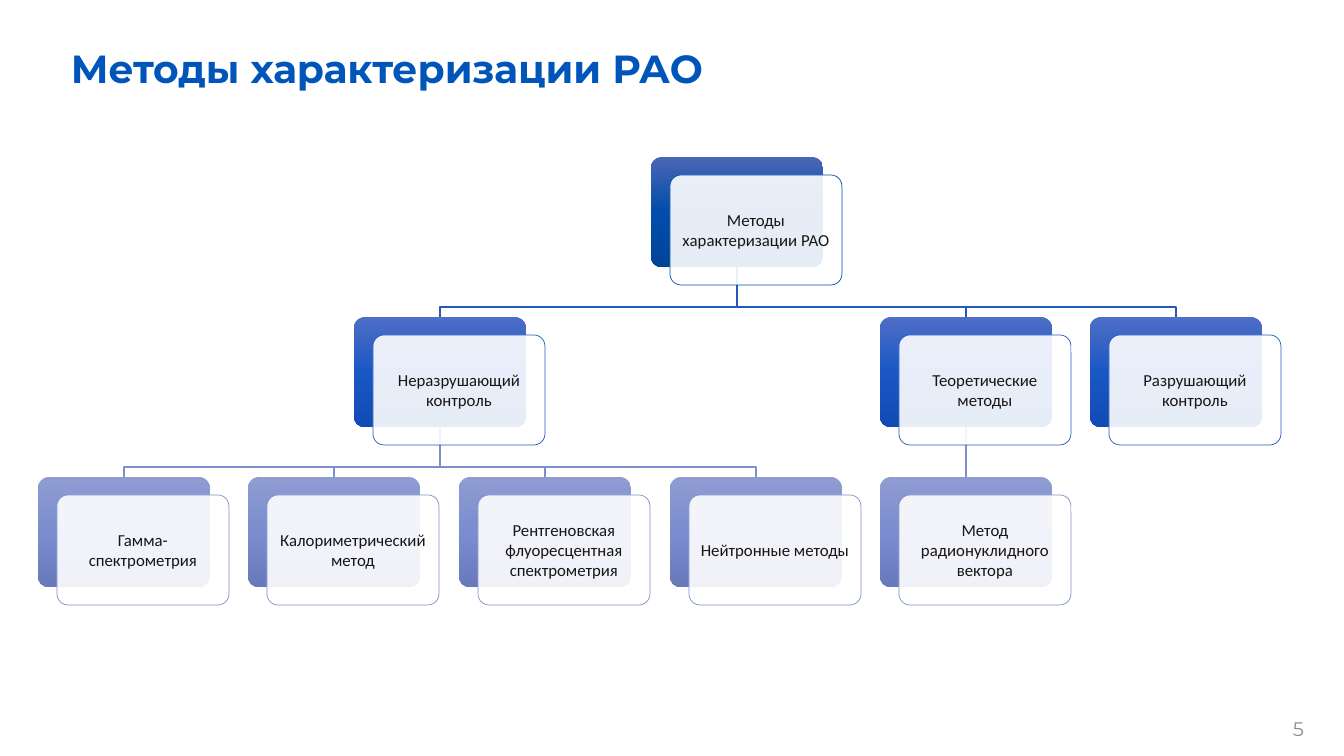
from copy import deepcopy
from dataclasses import dataclass

from lxml.etree import SubElement
from pptx import Presentation
from pptx.dml.color import RGBColor
from pptx.enum.shapes import MSO_CONNECTOR, MSO_SHAPE
from pptx.enum.text import MSO_ANCHOR, PP_ALIGN
from pptx.oxml.ns import qn
from pptx.util import Emu, Pt

SLIDE_SIZE = (1344, 756)
EMU_PER_PX = 12192000 / SLIDE_SIZE[0]


def px(length):
    return Emu(round(length * EMU_PER_PX))


@dataclass(frozen=True)
class Tier:
    gradient: tuple
    line: str


@dataclass(frozen=True)
class Theme:
    heading_font: str = "Montserrat"
    card_font: str = "Calibri"
    title_size: int = 28
    number_size: int = 14
    card_size: int = 12
    title: str = "0055BB"
    number: str = "8F9092"
    card_text: str = "171616"
    card_fill: str = "FFFFFF"
    tiers: tuple = (
        Tier(("4B66B4", "004DAA", "004497"), "004DAA"),
        Tier(("4F6EC6", "1A57C4", "114BB5"), "2259BC"),
        Tier(("8E9CD1", "7B8DCF", "697ABC"), "7F8FCB"),
    )


@dataclass(frozen=True)
class Method:
    label: str
    column: float
    children: tuple = ()


class HierarchySlide:
    LEFT, TOP = 38, 157
    COLUMN_STEP, TIER_STEP = 210.5, 160
    CARD_WIDTH, CARD_HEIGHT = 172, 110
    FRONT_DX, FRONT_DY = 19, 18
    BEND_RISE = 10  # height of the horizontal branch above the child card

    def __init__(self, slide, theme):
        self.shapes = slide.shapes
        self.theme = theme

    def corner(self, method, level):
        """Top left corner of a method's back card."""
        left = round(self.LEFT + method.column * self.COLUMN_STEP)
        return left, self.TOP + level * self.TIER_STEP

    def style_text(self, frame, text, font, size, color, bold=False):
        frame.text = text
        for run in frame.paragraphs[0].runs:
            run.font.name = font
            run.font.size = Pt(size)
            run.font.bold = bold
            run.font.color.rgb = RGBColor.from_string(color)

    def heading(self, text, left, top, width, height, size, color, bold=False, wrap=True):
        box = self.shapes.add_textbox(px(left), px(top), px(width), px(height))
        frame = box.text_frame
        frame.word_wrap = wrap
        frame.vertical_anchor = MSO_ANCHOR.MIDDLE if bold else MSO_ANCHOR.TOP
        self.style_text(frame, text, self.theme.heading_font, size, color, bold)

    def branch(self, parent, child, level):
        """Line from a parent on the given level down to its child."""
        parent_left, parent_top = self.corner(parent, level)
        child_left, child_top = self.corner(child, level + 1)
        start_x = parent_left + self.CARD_WIDTH // 2
        end_x = child_left + self.CARD_WIDTH // 2
        start_y = parent_top + self.CARD_HEIGHT
        if start_x == end_x:
            link = self.shapes.add_connector(
                MSO_CONNECTOR.STRAIGHT, px(start_x), px(start_y), px(end_x), px(child_top))
            SubElement(link._element.spPr, qn("a:effectLst"))
        else:
            bend_y = child_top - self.BEND_RISE
            builder = self.shapes.build_freeform(start_x, start_y, scale=EMU_PER_PX)
            corners = [(start_x, bend_y), (end_x, bend_y), (end_x, child_top)]
            builder.add_line_segments(corners, close=False)
            link = builder.convert_to_shape()
            link.fill.background()
            link.shadow.inherit = False
        link.line.color.rgb = RGBColor.from_string(self.theme.tiers[level + 1].line)
        link.line.width = Pt(1)

    def rounded(self, left, top):
        shape = self.shapes.add_shape(
            MSO_SHAPE.ROUNDED_RECTANGLE,
            px(left), px(top), px(self.CARD_WIDTH), px(self.CARD_HEIGHT))
        shape.adjustments[0] = 0.1
        shape.shadow.inherit = False
        return shape

    def fill_gradient(self, shape, colors):
        """Fill from top to bottom with three evenly placed colours."""
        shape.fill.gradient()
        shape.fill.gradient_angle = 270
        first = shape._element.spPr.find(".//" + qn("a:gs"))
        first.addnext(deepcopy(first))
        for index, (stop, color) in enumerate(zip(shape.fill.gradient_stops, colors)):
            stop.position = index / 2
            stop.color.rgb = RGBColor.from_string(color)

    def card(self, method, level):
        tier = self.theme.tiers[level]
        left, top = self.corner(method, level)
        back = self.rounded(left, top)
        self.fill_gradient(back, tier.gradient)
        back.line.fill.background()

        front = self.rounded(left + self.FRONT_DX, top + self.FRONT_DY)
        front.fill.solid()
        front.fill.fore_color.rgb = RGBColor.from_string(self.theme.card_fill)
        fill_color = front._element.spPr.find(qn("a:solidFill")).find(qn("a:srgbClr"))
        SubElement(fill_color, qn("a:alpha"), val="90000")
        front.line.color.rgb = RGBColor.from_string(tier.line)
        front.line.width = Pt(0.5)

        frame = front.text_frame
        frame.word_wrap = True
        frame.vertical_anchor = MSO_ANCHOR.MIDDLE
        frame.margin_left = frame.margin_right = px(5)
        frame.margin_top = frame.margin_bottom = px(5)
        self.style_text(frame, method.label, self.theme.card_font,
                        self.theme.card_size, self.theme.card_text)
        frame.paragraphs[0].alignment = PP_ALIGN.CENTER

    def branches(self, method, level=0):
        for child in method.children:
            self.branch(method, child, level)
            self.branches(child, level + 1)

    def cards(self, method, level=0):
        self.card(method, level)
        for child in method.children:
            self.cards(child, level + 1)


TITLE = "Методы характеризации РАО"
METHODS = Method(TITLE, 2.91, (
    Method("Неразрушающий контроль", 1.5, (
        Method("Гамма-спектрометрия", 0),
        Method("Калориметрический метод", 1),
        Method("Рентгеновская флуоресцентная спектрометрия", 2),
        Method("Нейтронные методы", 3),
    )),
    Method("Теоретические методы", 4, (
        Method("Метод радионуклидного вектора", 4),
    )),
    Method("Разрушающий контроль", 5),
))


def main():
    deck = Presentation()
    deck.slide_width, deck.slide_height = map(px, SLIDE_SIZE)
    theme = Theme()
    page = HierarchySlide(deck.slides.add_slide(deck.slide_layouts[6]), theme)
    page.heading(TITLE, 61, 39, 1014, 57, theme.title_size, theme.title, bold=True)
    page.heading("5", 1283, 712, 45, 34, theme.number_size, theme.number, wrap=False)
    page.branches(METHODS)
    page.cards(METHODS)
    deck.save("out.pptx")


if __name__ == "__main__":
    main()
